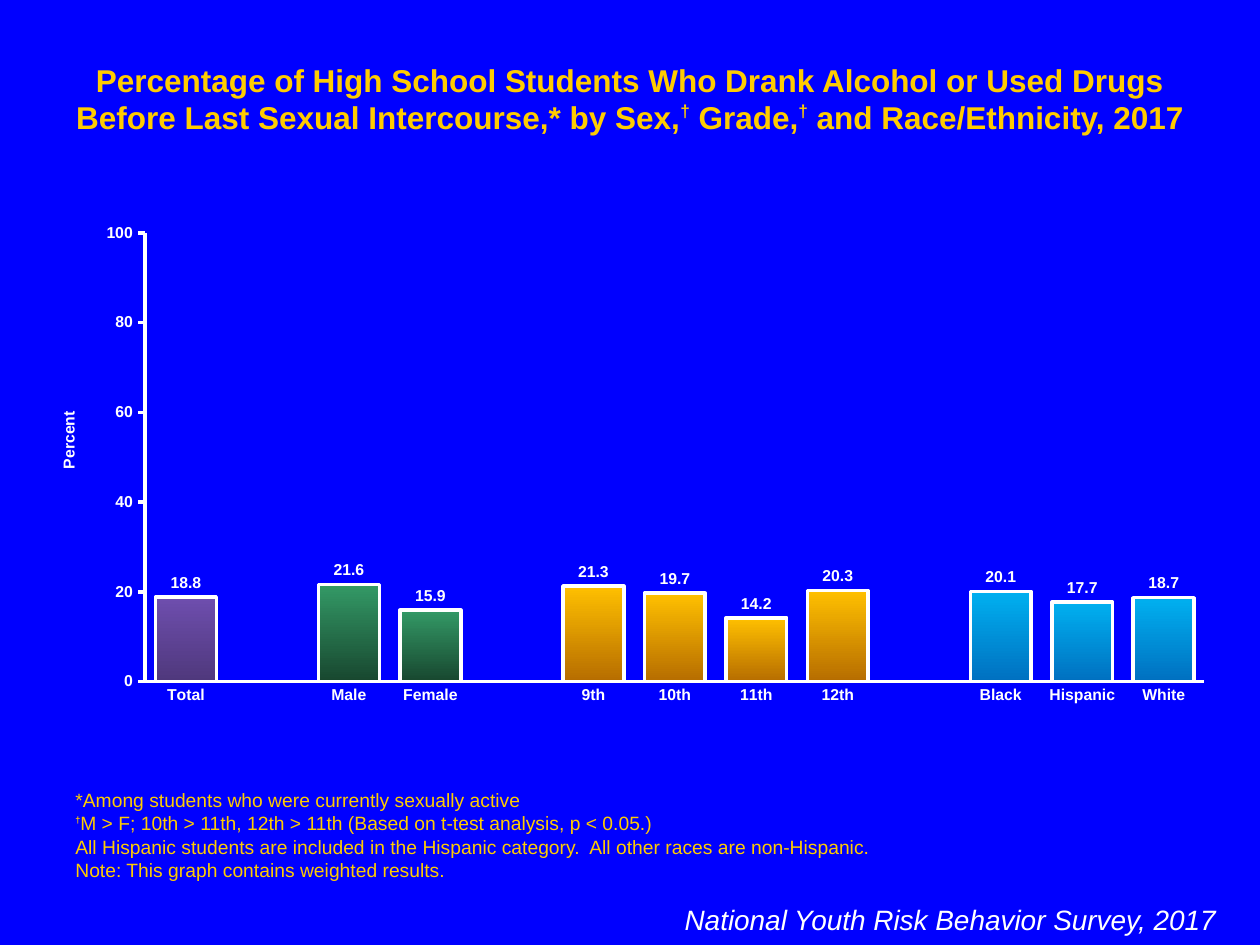
from lxml import etree
from pptx import Presentation
from pptx.chart.data import CategoryChartData
from pptx.dml.color import RGBColor
from pptx.enum.chart import XL_CHART_TYPE, XL_LABEL_POSITION, XL_TICK_MARK
from pptx.enum.text import MSO_ANCHOR, PP_ALIGN
from pptx.oxml.ns import qn
from pptx.util import Pt

COLUMNS = XL_CHART_TYPE.COLUMN_CLUSTERED
LABEL_ABOVE = XL_LABEL_POSITION.OUTSIDE_END
TICK_NONE, TICK_OUT = XL_TICK_MARK.NONE, XL_TICK_MARK.OUTSIDE
TOP, BOTTOM = MSO_ANCHOR.TOP, MSO_ANCHOR.BOTTOM
LEFT, CENTER, RIGHT = PP_ALIGN.LEFT, PP_ALIGN.CENTER, PP_ALIGN.RIGHT
GOLD, WHITE = "FFCC00", "FFFFFF"
color = RGBColor.from_string


def write(box, paragraphs, size, text_color, align, anchor, bold=False, italic=False):
    """Fill a box; each run is (text, raised size, baseline), or plain text."""
    frame = box.text_frame
    frame.word_wrap = True
    frame.vertical_anchor = anchor
    for index, runs in enumerate(paragraphs):
        para = frame.paragraphs[0] if index == 0 else frame.add_paragraph()
        para.alignment = align
        para.space_before = Pt(0)
        for run in runs:
            text, raised_size, baseline = (run, size, 0) if isinstance(run, str) else run
            span = para.add_run()
            span.text = text
            span.font.name = "Arial"
            span.font.size = Pt(raised_size)
            span.font.bold = bold or raised_size == 9
            span.font.italic = italic
            span.font.color.rgb = color(text_color)
            if baseline:
                span.font._element.set("baseline", str(baseline * 1000))


def add_layout(parent, position, **values):
    """Place a chart part at fractions of the chart area."""
    layout = parent.find(qn("c:layout"))
    if layout is None:
        layout = etree.Element(qn("c:layout"))
        text = parent.find(qn("c:tx"))
        parent.insert(0 if text is None else parent.index(text) + 1, layout)
    manual = etree.SubElement(layout, qn("c:manualLayout"))
    if position == "inner":
        etree.SubElement(manual, qn("c:layoutTarget")).set("val", "inner")
    for mode in ("xMode", "yMode"):
        etree.SubElement(manual, qn(f"c:{mode}")).set("val", "edge")
    for name, value in values.items():
        etree.SubElement(manual, qn(f"c:{name}")).set("val", str(value))


deck = Presentation()
deck.slide_width, deck.slide_height = Pt(720), Pt(540)
page = deck.slides.add_slide(deck.slide_layouts[5])
page.background.fill.solid()
page.background.fill.fore_color.rgb = color("0000FF")

# Title
title = page.shapes.title
title.left, title.top, title.width, title.height = Pt(36), Pt(31), Pt(648), Pt(50)
dagger = ("†", 17, 40)
write(title, [[
    "Percentage of High School Students Who Drank Alcohol or Used Drugs "
    "Before Last Sexual Intercourse,* by Sex,",
    dagger, " Grade,", dagger, " and Race/Ethnicity, 2017",
]], 18, GOLD, CENTER, TOP, bold=True)

# Chart groups: bar gradient from top to bottom, then the bars
groups = [
    ("6E4EAE", "4F387C", [("Total", 18.8)]),
    ("339966", "18472F", [("Male", 21.6), ("Female", 15.9)]),
    ("FFC000", "B66D00", [("9th", 21.3), ("10th", 19.7), ("11th", 14.2), ("12th", 20.3)]),
    ("00B0F0", "0070C0", [("Black", 20.1), ("Hispanic", 17.7), ("White", 18.7)]),
]
bars = []
for start, end, members in groups:
    if bars:
        bars.append(("", None, None, None))
    bars += [(name, value, start, end) for name, value in members]

data = CategoryChartData(number_format="General")
data.categories = [bar[0] for bar in bars]
data.add_series("Series 1", [bar[1] for bar in bars])
chart = page.shapes.add_chart(COLUMNS, Pt(18), Pt(121.7), Pt(684), Pt(286.5), data).chart
chart.has_legend = False
chart.has_title = False
chart.font.name = "Arial"
chart.font.size = Pt(18)
chart.font.color.rgb = color(WHITE)
add_layout(chart._chartSpace.chart.plotArea, "inner", x=0.095, y=0.04, w=0.885, h=0.895)

# Axes
percent_axis = chart.value_axis
percent_axis.minimum_scale, percent_axis.maximum_scale = 0, 100
percent_axis.major_unit = 20
percent_axis.has_major_gridlines = False
percent_axis.axis_title.text_frame.text = "Percent"
axis_title_font = percent_axis.axis_title.text_frame.paragraphs[0].runs[0].font
add_layout(percent_axis.axis_title._element, "outer", x=0.02, y=0.39)
for axis, tick in ((chart.category_axis, TICK_NONE), (percent_axis, TICK_OUT)):
    axis.major_tick_mark = tick
    axis.minor_tick_mark = TICK_NONE
    axis.format.line.color.rgb = color(WHITE)
    axis.format.line.width = Pt(2)

# Bars and their labels
plot = chart.plots[0]
plot.gap_width, plot.overlap = 34, 100
plot.vary_by_categories = False
series = plot.series[0]
series.format.fill.solid()
series.format.fill.fore_color.rgb = color("26CA59")
for index, (name, value, start, end) in enumerate(bars):
    if value is None:
        continue
    bar_format = series.points[index].format
    bar_format.fill.gradient()
    bar_format.fill.gradient_angle = 270
    for stop, stop_color in zip(bar_format.fill.gradient_stops, (start, end)):
        stop.color.rgb = color(stop_color)
    bar_format.line.color.rgb = color(WHITE)
    bar_format.line.width = Pt(2)

labels = series.data_labels
labels.show_value = True
labels.number_format = "#,##0.0"
labels.number_format_is_linked = False
labels.position = LABEL_ABOVE
for font in (labels.font, axis_title_font, chart.category_axis.tick_labels.font,
             percent_axis.tick_labels.font):
    font.name = "Arial"
    font.size = Pt(9)
    font.bold = True
    font.color.rgb = color(WHITE)

# Footnotes
notes = page.shapes.add_textbox(Pt(36), Pt(447), Pt(648), Pt(60))
write(notes, [
    ["*Among students who were currently sexually active"],
    [("†", 9, 50), "M > F; 10th > 11th, 12th > 11th (Based on t-test analysis, p < 0.05.)"],
    ["All Hispanic students are included in the Hispanic category.  "
     "All other races are non-Hispanic."],
    ["Note: This graph contains weighted results."],
], 11, GOLD, LEFT, BOTTOM)

# Survey name
survey = page.shapes.add_textbox(Pt(306), Pt(512), Pt(396), Pt(26))
write(survey, [["National Youth Risk Behavior Survey, 2017"]],
      16, WHITE, RIGHT, TOP, italic=True)

deck.save("out.pptx")
